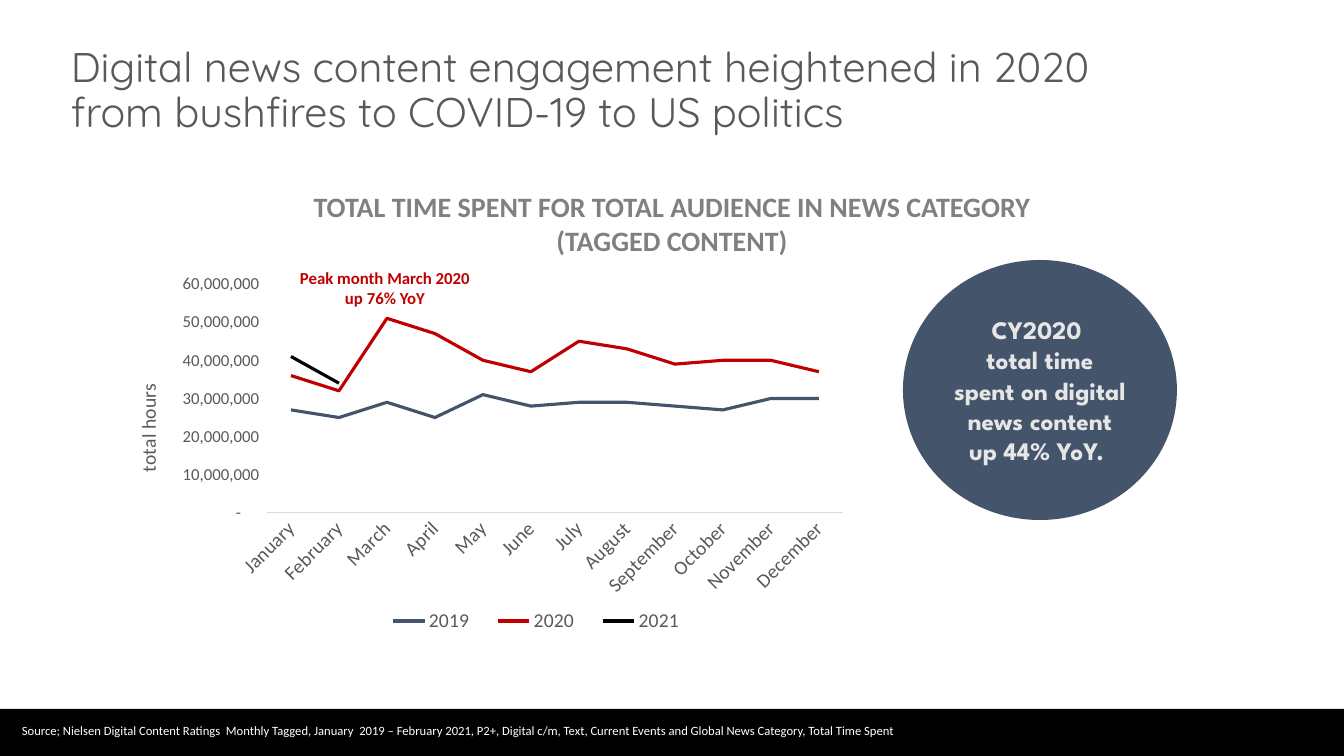
from lxml import etree
from pptx import Presentation
from pptx.chart.data import CategoryChartData
from pptx.dml.color import RGBColor
from pptx.enum.chart import XL_CHART_TYPE as CT, XL_LEGEND_POSITION as LP, XL_TICK_MARK as TM
from pptx.enum.shapes import MSO_SHAPE as SHAPE
from pptx.enum.text import MSO_ANCHOR as ANCHOR, PP_ALIGN as ALIGN
from pptx.oxml.ns import qn
from pptx.util import Pt

# Content
TITLE = "Digital news content engagement heightened in 2020 from bushfires to COVID-19 to US politics"
HEADING = ["TOTAL TIME SPENT FOR TOTAL AUDIENCE IN NEWS CATEGORY", "(TAGGED CONTENT)"]
CALLOUT = "CY2020 \vtotal time spent on digital news content up 44% YoY. "
PEAK = "Peak month March 2020 up 76% YoY"
SOURCE = ("Source; Nielsen Digital Content Ratings  Monthly Tagged, January  2019 – February 2021, "
          "P2+, Digital c/m, Text, Current Events and Global News Category, Total Time Spent")
MONTHS = ["January", "February", "March", "April", "May", "June", "July",
          "August", "September", "October", "November", "December"]
MILLION_HOURS = {
    "2019": ("slate", [27, 25, 29, 25, 31, 28, 29, 29, 28, 27, 30, 30]),
    "2020": ("red", [36, 32, 51, 47, 40, 37, 45, 43, 39, 40, 40, 37]),
    "2021": ("black", [41, 34] + [None] * 10),
}
HOURS_FORMAT = '_-* #,##0_-;\\-* #,##0_-;_-* "-"??_-;_-@_-'
COLORS = {"black": "000000", "white": "FFFFFF", "text": "595959", "heading": "808080",
          "slate": "44546A", "pale": "E7E6E6", "red": "C00000", "axis": "D9D9D9"}

# Geometry in px
PX = 914400 / 100.8
WIDTH, HEIGHT = 1344, 756
CHART = (112, 266, 746, 379)
PLOT = (267, 284, 576, 229)
AXIS_TITLE = (131, 380)
LEGEND = (371, 606, 330, 30)


def emu(*lengths):
    return [round(n * PX) for n in lengths]


def color(name):
    return RGBColor.from_string(COLORS[name])


def style(font, size, fill, name="Calibri", bold=False):
    font.size, font.name, font.bold = Pt(size), name, bold
    font.color.rgb = color(fill)


def write(sp, lines, size, fill, name="Calibri", bold=False, align=ALIGN.LEFT,
          anchor=ANCHOR.TOP, spacing=None):
    tf = sp.text_frame
    tf.word_wrap, tf.vertical_anchor = True, anchor
    for i, line in enumerate(lines):
        p = tf.add_paragraph() if i else tf.paragraphs[0]
        p.text, p.alignment, p.line_spacing = line, align, spacing
        for r in p.runs:
            style(r.font, size, fill, name, bold)


def text(s, box, lines, **fmt):
    write(s.shapes.add_textbox(*emu(*box)), lines, **fmt)


def shape(s, kind, box, fill):
    sp = s.shapes.add_shape(kind, *emu(*box))
    sp.shadow.inherit = False
    sp.fill.solid()
    sp.fill.fore_color.rgb = color(fill)
    sp.line.fill.background()
    return sp


def place(element, index, box, inner=False):
    """Put a chart part at a px box, as fractions of the chart frame."""
    for old in element.findall(qn("c:layout")):
        element.remove(old)
    layout = etree.Element(qn("c:layout"))
    element.insert(index, layout)
    manual = etree.SubElement(layout, qn("c:manualLayout"))
    left, top, width, height = CHART
    settings = [("layoutTarget", "inner")] if inner else []
    settings += [("xMode", "edge"), ("yMode", "edge")]
    fractions = [(box[0] - left) / width, (box[1] - top) / height]
    if len(box) == 4:
        fractions += [box[2] / width, box[3] / height]
    settings += [(tag, f"{n:.4f}") for tag, n in zip("xywh", fractions)]
    for tag, val in settings:
        etree.SubElement(manual, qn("c:" + tag), val=val)


def add_hours_chart(s):
    data = CategoryChartData(number_format=HOURS_FORMAT)
    data.categories = MONTHS
    for year, (_, values) in MILLION_HOURS.items():
        data.add_series(year, [v and v * 1_000_000 for v in values])
    chart = s.shapes.add_chart(CT.LINE, *emu(*CHART), data).chart
    style(chart.font, 10, "black")
    chart.has_title = False
    plot = chart.plots[0]
    plot.vary_by_categories = False
    for series, (fill, _) in zip(plot.series, MILLION_HOURS.values()):
        series.smooth = False
        series.format.line.color.rgb = color(fill)
        series.format.line.width = Pt(2.25)

    # Axes
    months, hours = chart.category_axis, chart.value_axis
    for axis, size in ((months, 14), (hours, 12)):
        axis.major_tick_mark = axis.minor_tick_mark = TM.NONE
        axis.has_major_gridlines = False
        style(axis.tick_labels.font, size, "text")
    months.format.line.color.rgb = color("axis")
    months.format.line.width = Pt(0.75)
    months._element.find(qn("c:txPr")).find(qn("a:bodyPr")).set("rot", "-2700000")
    hours.format.line.fill.background()
    hours.minimum_scale, hours.maximum_scale, hours.major_unit = 0, 60_000_000, 10_000_000
    hours.tick_labels.number_format = HOURS_FORMAT
    hours.tick_labels.number_format_is_linked = False
    tf = hours.axis_title.text_frame
    tf.text = "total hours"
    style(tf.paragraphs[0].runs[0].font, 14, "text")
    tf._txBody.find(qn("a:bodyPr")).set("rot", "-5400000")

    # Legend and placement
    chart.has_legend = True
    chart.legend.position = LP.BOTTOM
    chart.legend.include_in_layout = False
    style(chart.legend.font, 14, "text")
    place(chart._chartSpace.chart.plotArea, 0, PLOT, inner=True)
    place(hours.axis_title._element, 1, AXIS_TITLE)
    place(chart.legend._element, 1, LEGEND)


def main():
    prs = Presentation()
    prs.slide_width, prs.slide_height = emu(WIDTH, HEIGHT)
    s = prs.slides.add_slide(prs.slide_layouts[6])

    # Footer band, title and heading
    shape(s, SHAPE.RECTANGLE, (0, 709, WIDTH, 47), "black")
    text(s, (61, 34, 1104, 115), [TITLE], size=29.6, fill="text", name="Quicksand",
         anchor=ANCHOR.MIDDLE, spacing=0.9)
    text(s, (0, 185, WIDTH, 78), HEADING, size=20, fill="heading", bold=True, align=ALIGN.CENTER)

    # Chart, callouts and source
    add_hours_chart(s)
    circle = shape(s, SHAPE.OVAL, (903, 260, 274, 260), "slate")
    write(circle, [CALLOUT], size=18, fill="pale", name="League Spartan", bold=True,
          align=ALIGN.CENTER, anchor=ANCHOR.MIDDLE)
    text(s, (285, 263, 200, 50), [PEAK], size=12, fill="red", bold=True, align=ALIGN.CENTER)
    text(s, (12, 718, 1095, 25), [SOURCE], size=9, fill="white")
    prs.save("out.pptx")


if __name__ == "__main__":
    main()
